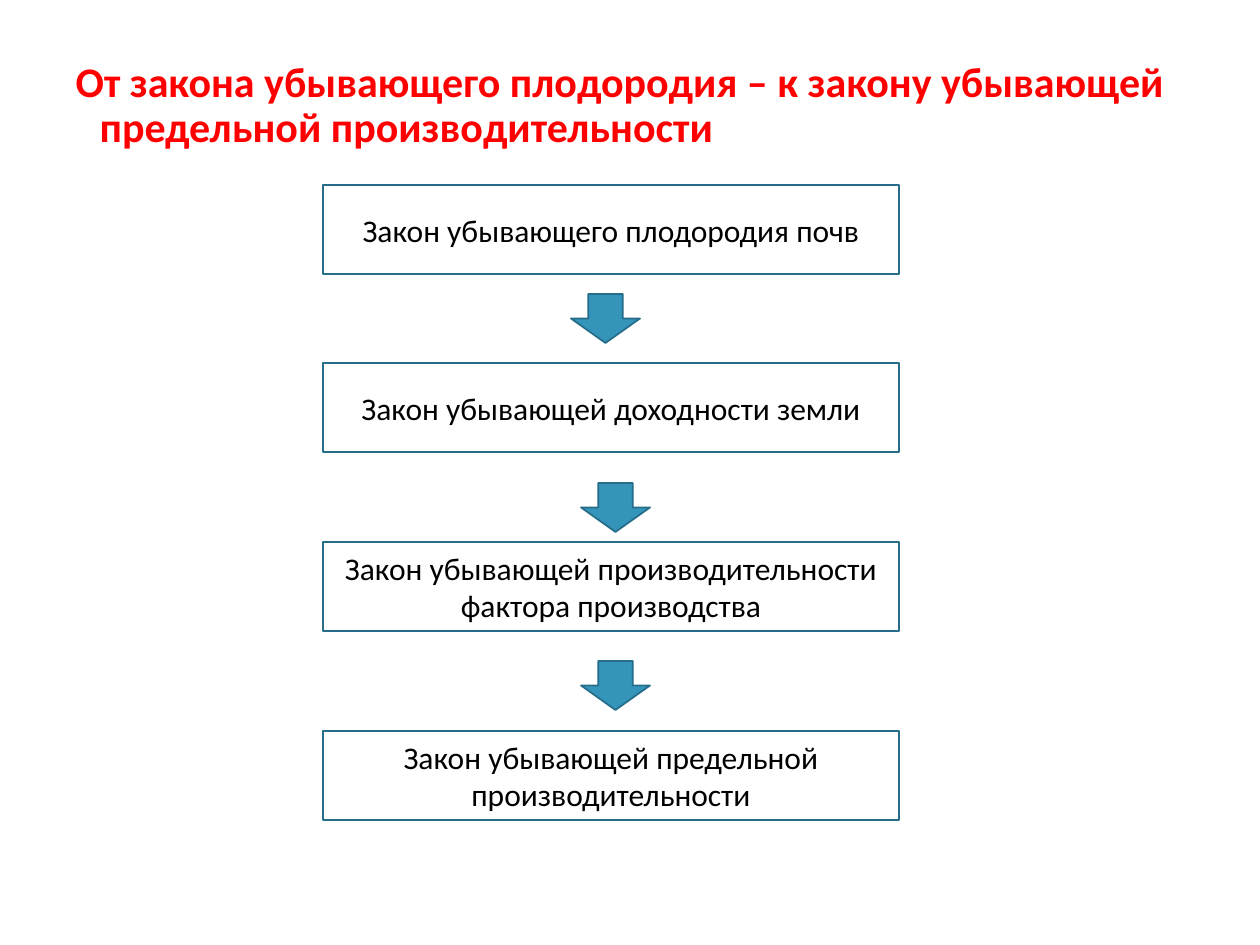
from lxml import etree
from pptx import Presentation
from pptx.dml.color import RGBColor
from pptx.enum.shapes import MSO_SHAPE
from pptx.enum.text import MSO_ANCHOR, MSO_AUTO_SIZE, PP_ALIGN
from pptx.oxml.ns import qn
from pptx.util import Pt

PX = 914400 // 126
RECTANGLE, DOWN_ARROW = MSO_SHAPE.RECTANGLE, MSO_SHAPE.DOWN_ARROW
MIDDLE, TOP = MSO_ANCHOR.MIDDLE, MSO_ANCHOR.TOP
CENTER, LEFT = PP_ALIGN.CENTER, PP_ALIGN.LEFT
NO_AUTOFIT = MSO_AUTO_SIZE.NONE

COLORS = {"heading": "FF0000", "text": "000000", "outline": "266D8A", "arrow": "3494BA"}
FONT = "Calibri"

HEADING = "От закона убывающего плодородия – к закону убывающей предельной производительности"
BOX_LEFT, BOX_WIDTH, BOX_HEIGHT = 323, 576, 89
LAWS = [
    (185, "Закон убывающего плодородия почв"),
    (363, "Закон убывающей доходности земли"),
    (542, "Закон убывающей производительности фактора производства"),
    (731, "Закон убывающей предельной производительности"),
]
ARROW_WIDTH, ARROW_HEIGHT = 69, 49
ARROWS = [(571, 294), (581, 483), (581, 661)]


def color(name):
    return RGBColor.from_string(COLORS[name])


class SlideBuilder:
    """Draws styled elements on one slide, with lengths in px."""

    def __init__(self, slide):
        self.slide = slide

    def set_text(self, text_frame, text, size, color_name, alignment, bold=False):
        text_frame.text = text
        paragraph = text_frame.paragraphs[0]
        paragraph.alignment = alignment
        font = paragraph.runs[0].font
        font.name, font.size, font.bold = FONT, Pt(size), bold
        font.color.rgb = color(color_name)
        return paragraph

    def heading(self, left, top, width, height, text):
        """Puts the heading in the body placeholder with a hanging indent."""
        body = self.slide.placeholders[1]
        body.left, body.top = left * PX, top * PX
        body.width, body.height = width * PX, height * PX
        text_frame = body.text_frame
        text_frame.auto_size = NO_AUTOFIT
        text_frame.vertical_anchor = TOP
        paragraph = self.set_text(text_frame, text, 24, "heading", LEFT, bold=True)
        paragraph.line_spacing = 0.9
        paragraph.space_before = Pt(7.5)
        properties = paragraph._p.get_or_add_pPr()
        properties.set("marL", str(24 * PX))
        properties.set("indent", str(-24 * PX))
        etree.SubElement(properties, qn("a:buNone"))

    def outlined_shape(self, kind, left, top, width, height):
        shape = self.slide.shapes.add_shape(
            kind, left * PX, top * PX, width * PX, height * PX)
        shape.shadow.inherit = False
        shape.line.color.rgb = color("outline")
        shape.line.width = Pt(1)
        return shape

    def box(self, left, top, width, height, text):
        shape = self.outlined_shape(RECTANGLE, left, top, width, height)
        shape.fill.background()
        shape.text_frame.word_wrap = True
        shape.text_frame.vertical_anchor = MIDDLE
        self.set_text(shape.text_frame, text, 18, "text", CENTER)

    def arrow(self, left, top, width, height):
        shape = self.outlined_shape(DOWN_ARROW, left, top, width, height)
        shape.fill.solid()
        shape.fill.fore_color.rgb = color("arrow")


def main():
    presentation = Presentation()
    presentation.slide_width, presentation.slide_height = 1260 * PX, 945 * PX
    slide = presentation.slides.add_slide(presentation.slide_layouts[1])
    title = slide.shapes.title._element
    title.getparent().remove(title)

    builder = SlideBuilder(slide)
    builder.heading(63, 55, 1134, 815, HEADING)
    for top, law in LAWS:
        builder.box(BOX_LEFT, top, BOX_WIDTH, BOX_HEIGHT, law)
    for left, top in ARROWS:
        builder.arrow(left, top, ARROW_WIDTH, ARROW_HEIGHT)

    presentation.save("out.pptx")


if __name__ == "__main__":
    main()
